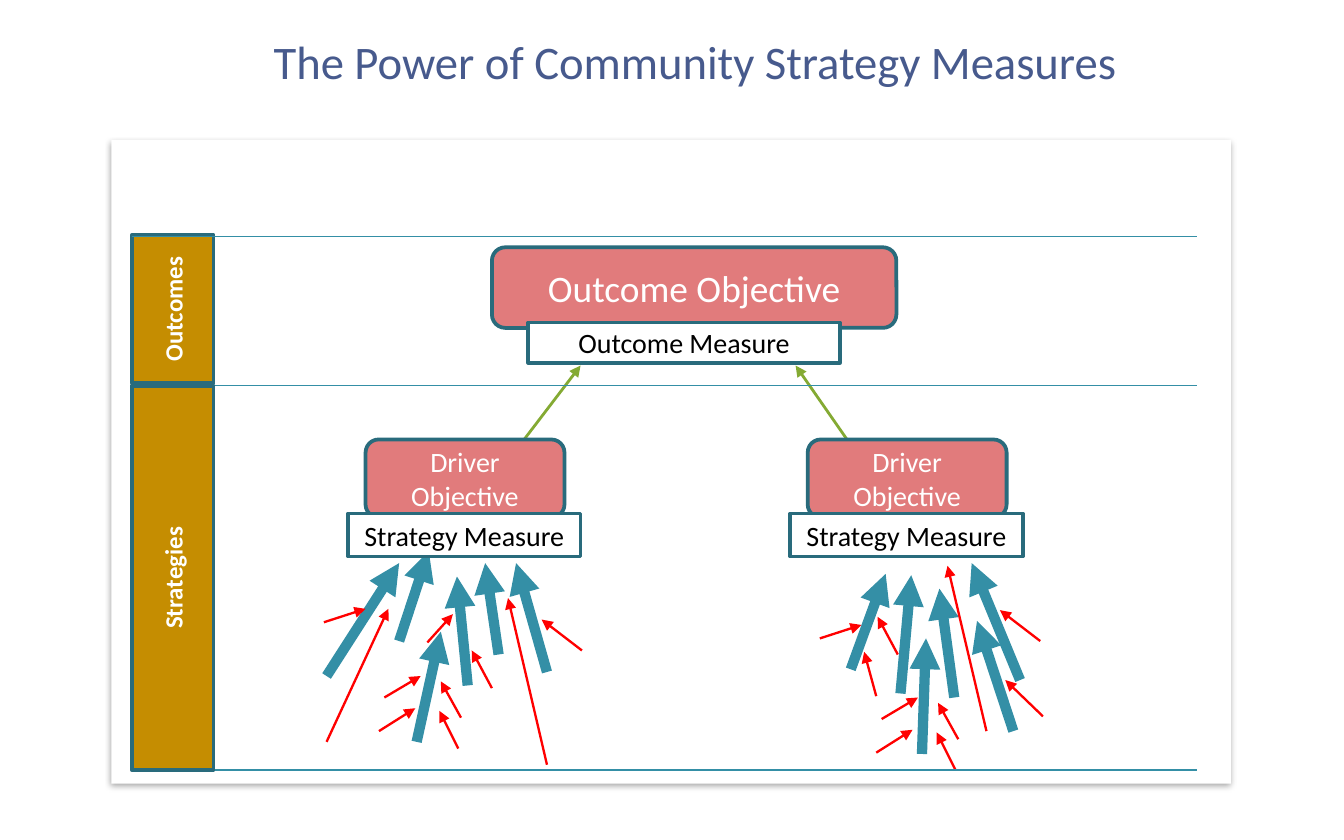
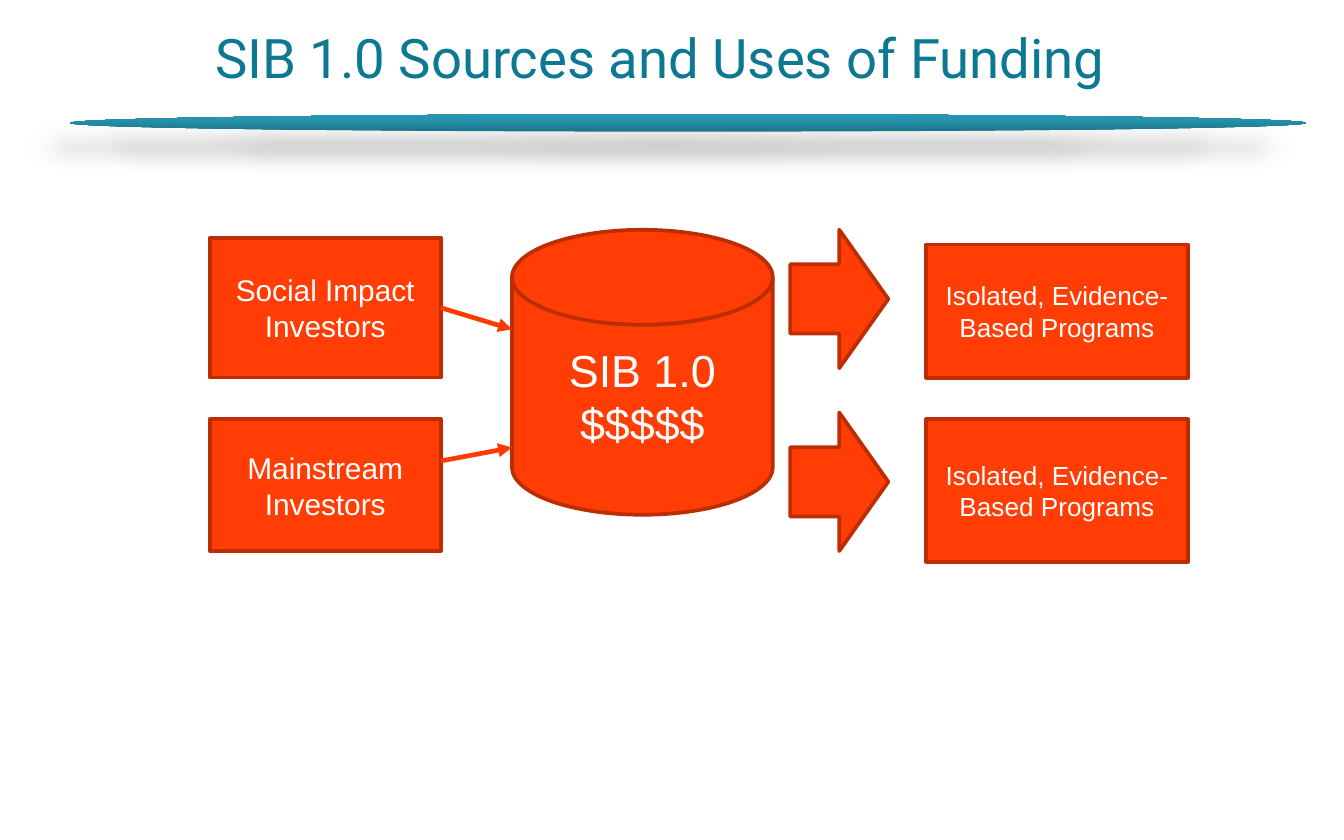
from copy import deepcopy

from lxml import etree
from pptx import Presentation
from pptx.dml.color import RGBColor
from pptx.enum.shapes import MSO_CONNECTOR, MSO_SHAPE
from pptx.enum.text import MSO_ANCHOR, PP_ALIGN
from pptx.oxml.ns import qn
from pptx.util import Inches, Pt

RECTANGLE = MSO_SHAPE.RECTANGLE
ROUNDED = MSO_SHAPE.ROUNDED_RECTANGLE
CYLINDER = MSO_SHAPE.FLOWCHART_MAGNETIC_DISK
RIGHT_ARROW = MSO_SHAPE.RIGHT_ARROW
ELLIPSE = MSO_SHAPE.OVAL
STRAIGHT = MSO_CONNECTOR.STRAIGHT
CENTER = PP_ALIGN.CENTER
MIDDLE = MSO_ANCHOR.MIDDLE
RIGHT_SIDE = 3

WHITE = RGBColor(0xFF, 0xFF, 0xFF)
BLACK = RGBColor(0x00, 0x00, 0x00)
INDIGO = RGBColor(0x47, 0x5A, 0x8D)
TEAL = RGBColor(0x34, 0x8F, 0xA6)
DARK_TEAL = RGBColor(0x29, 0x6B, 0x7C)
TITLE_TEAL = RGBColor(0x0D, 0x78, 0x92)
GREEN = RGBColor(0x84, 0xAA, 0x33)
RED = RGBColor(0xFF, 0x00, 0x00)
ROSE = RGBColor(0xE1, 0x7B, 0x7C)
GOLD = RGBColor(0xC5, 0x8D, 0x01)
ORANGE = RGBColor(0xFF, 0x3D, 0x04)
ORANGE_LINE = RGBColor(0xFD, 0x3A, 0x00)
RUST = RGBColor(0xBD, 0x2D, 0x03)
BAND_STOPS = ((0, RGBColor(0x1D, 0x74, 0x89)),
              (0.8, RGBColor(0x26, 0x96, 0xB2)),
              (1, RGBColor(0x24, 0x99, 0xB5)))

# Arrows are (from x, from y, to x, to y) in inches.
STRATEGY_ARROWS = (
    (6.86, 5.61, 6.89, 4.75), (6.33, 4.98, 6.59, 4.27),
    (7.54, 5.44, 7.27, 4.62), (7.59, 5.06, 7.23, 4.19),
    (7.10, 5.19, 6.99, 4.38), (6.70, 5.16, 6.78, 4.28),
    (3.10, 5.52, 3.28, 4.70), (4.07, 5.00, 3.84, 4.19),
    (3.71, 4.87, 3.61, 4.19), (2.43, 5.03, 2.97, 4.19),
    (2.97, 4.77, 3.19, 4.10), (3.48, 5.10, 3.40, 4.29),
)
DRIVER_ARROWS = ((3.90, 3.27, 4.32, 2.72), (6.33, 3.31, 5.92, 2.72))
ACTION_ARROWS = (
    (2.43, 5.52, 2.89, 4.53), (4.07, 5.69, 3.78, 4.45),
    (7.34, 5.44, 7.05, 4.21), (3.66, 5.12, 3.51, 4.84),
    (4.33, 4.84, 4.03, 4.61), (2.41, 4.63, 2.72, 4.53),
    (3.18, 4.78, 3.37, 4.57), (6.10, 4.75, 6.41, 4.65),
    (6.68, 4.87, 6.53, 4.59), (6.52, 5.18, 6.43, 4.85),
    (7.76, 5.33, 7.48, 5.06), (7.74, 4.77, 7.44, 4.54),
)
ACTION_CLUSTER = (
    (2.86, 5.19, 3.13, 5.03), (2.82, 5.44, 3.09, 5.27),
    (3.41, 5.57, 3.27, 5.29), (3.43, 5.34, 3.28, 5.07),
)
CLUSTER_SHIFTS = ((0, 0), (3.7, 0.16))


def write_text(frame, text, *, size, font="Calibri", color=WHITE, bold=False):
    """Fill a frame with centred text, one paragraph to each line."""
    frame.word_wrap = True
    frame.vertical_anchor = MIDDLE
    for index, line in enumerate(text.split("\n")):
        para = frame.add_paragraph() if index else frame.paragraphs[0]
        para.alignment = CENTER
        span = para.add_run()
        span.text = line
        span.font.name = font
        span.font.size = Pt(size)
        span.font.bold = bold
        span.font.color.rgb = color


class Slides:
    def __init__(self):
        self.deck = Presentation()
        self.deck.slide_width = Inches(10)
        self.deck.slide_height = Inches(6.25)
        self.page = None

    def new_page(self):
        self.page = self.deck.slides.add_slide(self.deck.slide_layouts[6])

    def title(self, text, left, top, height, **text_format):
        box = self.page.shapes.add_textbox(
            Inches(left), Inches(top), Inches(7.5), Inches(height))
        write_text(box.text_frame, text, **text_format)

    def shape(self, kind, left, top, width, height, fill=None, outline=None,
              text=None, **text_format):
        shape = self.page.shapes.add_shape(
            kind, Inches(left), Inches(top), Inches(width), Inches(height))
        shape.shadow.inherit = False
        if fill is not None:
            shape.fill.solid()
            shape.fill.fore_color.rgb = fill
        if outline is None:
            shape.line.fill.background()
        else:
            shape.line.color.rgb = outline
            shape.line.width = Pt(2)
        if text:
            write_text(shape.text_frame, text, **text_format)
        return shape

    def line(self, start_x, start_y, end_x, end_y, color, width, arrow=True):
        line = self.page.shapes.add_connector(
            STRAIGHT, Inches(start_x), Inches(start_y), Inches(end_x), Inches(end_y))
        line.line.color.rgb = color
        line.line.width = Pt(width)
        properties = line._element.spPr
        if arrow:
            outline = properties.find(qn("a:ln"))
            etree.SubElement(outline, qn("a:tailEnd"), type="triangle")
        etree.SubElement(properties, qn("a:effectLst"))
        return line

    def lane_label(self, text, top, height):
        label = self.shape(RECTANGLE, 0.98, top, 0.61, height, GOLD, DARK_TEAL,
                           text, size=13.3, bold=True)
        label._element.txBody.bodyPr.set("vert", "vert270")

    def shadow(self, shape, opacity, blur, distance, angle):
        """Opacity in percent, blur and distance in points, angle in degrees."""
        effects = shape._element.spPr.find(qn("a:effectLst"))
        outer = etree.SubElement(
            effects, qn("a:outerShdw"), blurRad=str(Pt(blur)), dist=str(Pt(distance)),
            dir=str(angle * 60000), algn="ctr", rotWithShape="0")
        color = etree.SubElement(outer, qn("a:srgbClr"), val=str(BLACK))
        etree.SubElement(color, qn("a:alpha"), val=str(opacity * 1000))

    def gradient(self, shape, stops):
        """Run the colour stops from the bottom of the shape to its top."""
        shape.fill.gradient()
        shape.fill.gradient_angle = 90
        stop_list = shape._element.spPr.find(".//" + qn("a:gsLst"))
        while len(stop_list) < len(stops):
            stop_list.append(deepcopy(stop_list[0]))
        for stop, (position, color) in zip(shape.fill.gradient_stops, stops):
            stop.position = position
            stop.color.rgb = color


def build_strategy_page(slides):
    slides.new_page()
    panel = slides.shape(RECTANGLE, 0.83, 1.04, 8.33, 4.79, WHITE)
    slides.shadow(panel, 35, 3.1, 1.8, 90)
    slides.title("The Power of Community Strategy Measures", 1.42, 0.13, 0.65,
                 size=25, color=INDIGO)

    cluster_arrows = tuple(
        (x1 + dx, y1 + dy, x2 + dx, y2 + dy)
        for dx, dy in CLUSTER_SHIFTS for x1, y1, x2, y2 in ACTION_CLUSTER)
    for arrows, color, width in ((STRATEGY_ARROWS, TEAL, 5.5),
                                 (DRIVER_ARROWS, GREEN, 1.5),
                                 (ACTION_ARROWS + cluster_arrows, RED, 1.25)):
        for arrow in arrows:
            slides.line(*arrow, color, width)

    slides.shape(ROUNDED, 3.66, 1.84, 3.01, 0.6, ROSE, DARK_TEAL,
                 "Outcome Objective", size=20)
    for left in (2.59, 5.88):
        slides.shape(ROUNDED, left + 0.13, 3.27, 1.48, 0.58, ROSE, DARK_TEAL,
                     "Driver Objective", size=15)
        slides.shape(RECTANGLE, left, 3.82, 1.73, 0.32, WHITE, DARK_TEAL,
                     "Strategy Measure", size=15, color=BLACK)
    slides.shape(RECTANGLE, 3.93, 2.4, 2.32, 0.3, WHITE, DARK_TEAL,
                 "Outcome Measure", size=15, color=BLACK)

    slides.lane_label("Outcomes", 1.75, 1.1)
    for y in (1.76, 2.87, 5.73):
        slides.line(0.98, y, 8.91, y, TEAL, 0.75, arrow=False)
    slides.lane_label("Strategies", 2.87, 2.86)


def build_funding_page(slides):
    slides.new_page()
    slides.title("SIB 1.0 Sources and Uses of Funding", 1.16, 0.07, 0.71,
                 size=29.2, font="Roboto", color=TITLE_TEAL)
    slides.shape(CYLINDER, 3.81, 1.71, 1.94, 2.12, ORANGE, RUST,
                 "SIB 1.0\n$$$$$", size=24, font="Arial")
    for top in (1.71, 3.07):
        slides.shape(RIGHT_ARROW, 5.88, top, 0.73, 1.03, ORANGE, RUST)
    for top, height in ((1.82, 0.99), (3.12, 1.06)):
        slides.shape(RECTANGLE, 6.89, top, 1.95, height, ORANGE, RUST,
                     "Isolated, Evidence-Based Programs", size=14, font="Arial")

    social, _ = [
        slides.shape(RECTANGLE, 1.56, top, 1.72, height, ORANGE, RUST,
                     text, size=16, font="Arial")
        for text, top, height in (("Social Impact Investors", 1.77, 1.04),
                                  ("Mainstream Investors", 3.12, 0.98))]
    social_arrow = slides.line(3.28, 2.29, 3.81, 2.45, ORANGE_LINE, 2.5)
    social_arrow.begin_connect(social, RIGHT_SIDE)
    slides.line(3.28, 3.43, 3.81, 3.33, ORANGE_LINE, 2.5)

    band = slides.shape(ELLIPSE, 0.52, 0.85, 9.2, 0.13)
    slides.gradient(band, BAND_STOPS)
    slides.shadow(band, 28, 11.8, 19.7, 141)


def main():
    slides = Slides()
    build_strategy_page(slides)
    build_funding_page(slides)
    slides.deck.save("out.pptx")


if __name__ == "__main__":
    main()
